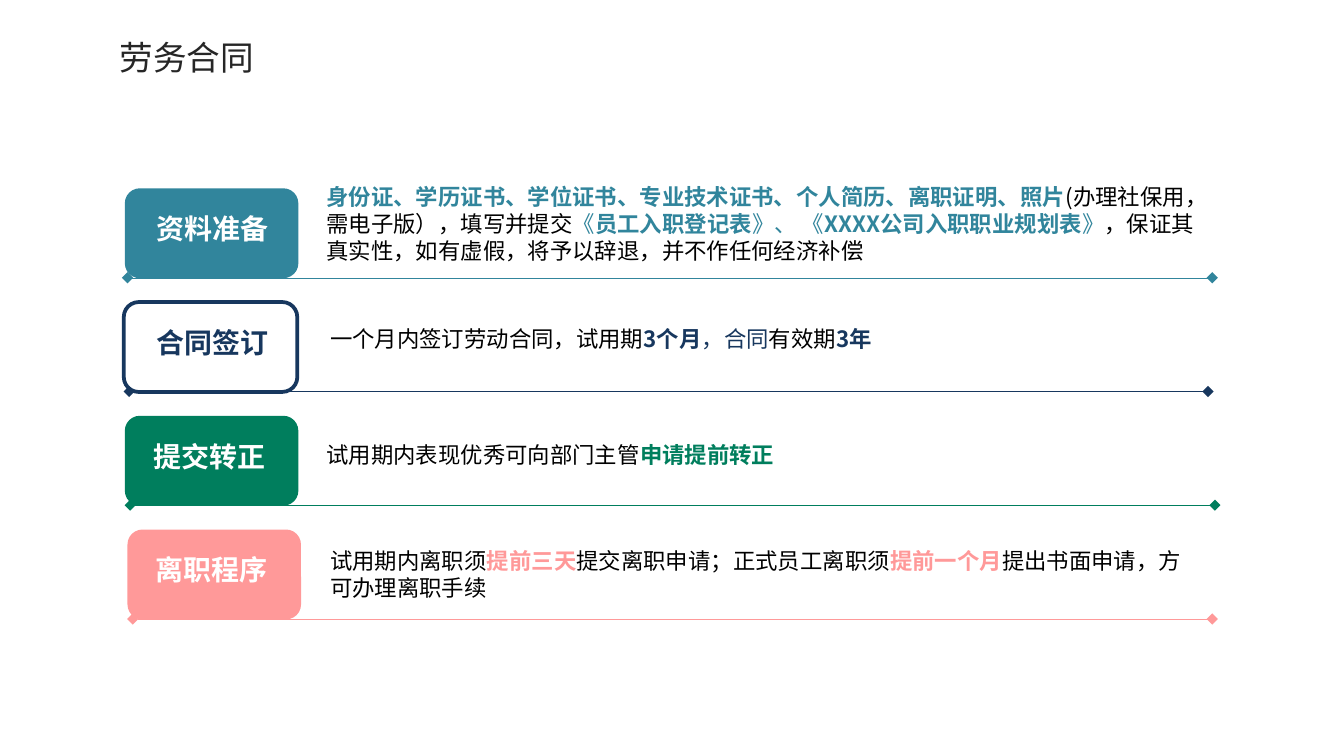
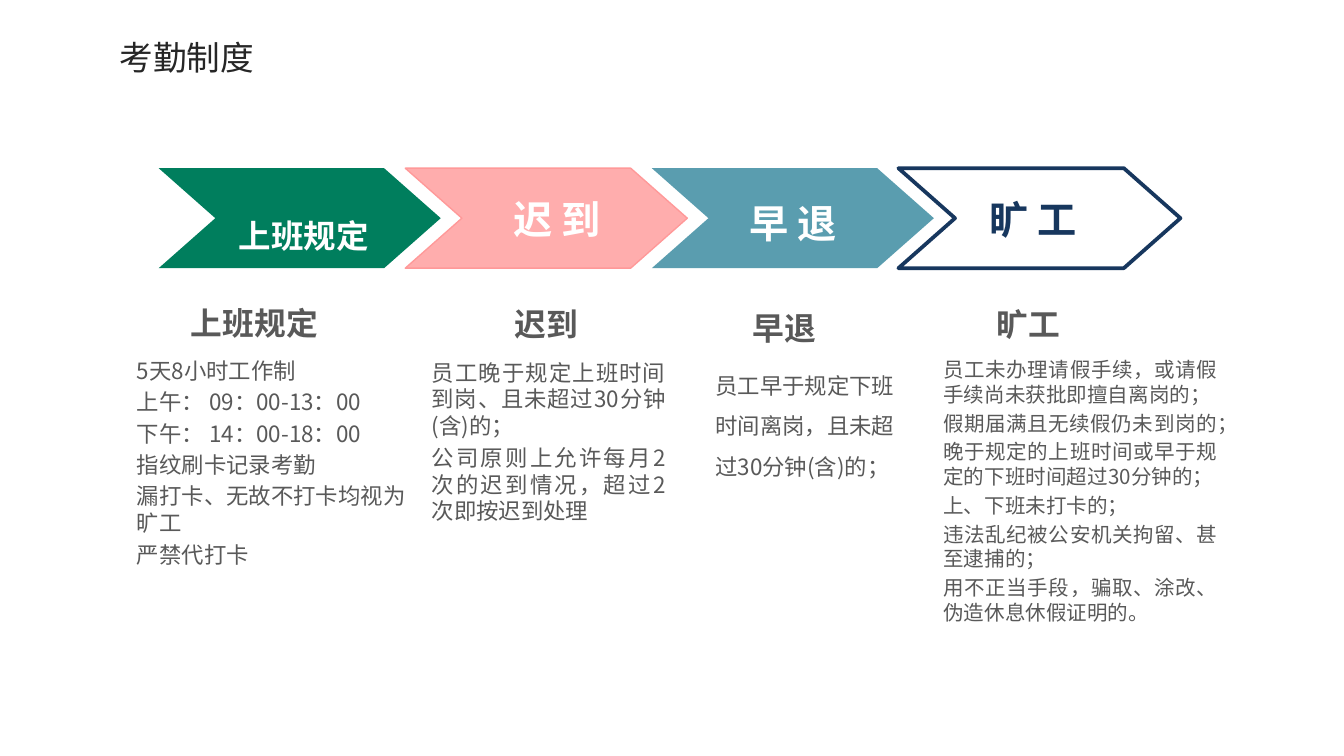
from dataclasses import dataclass
from typing import NamedTuple

from lxml.etree import SubElement
from pptx import Presentation
from pptx.dml.color import RGBColor
from pptx.enum.dml import MSO_LINE as Dash
from pptx.enum.shapes import MSO_CONNECTOR as Link, MSO_SHAPE as Form
from pptx.enum.text import MSO_ANCHOR as Anchor, MSO_AUTO_SIZE as Fit, PP_ALIGN as Align
from pptx.oxml.ns import qn
from pptx.util import Cm, Pt

FONT = "Noto Sans CJK SC"
HUES = {
    "white": "FFFFFF", "black": "000000", "title": "262626", "gray": "595959",
    "teal": "31859C", "navy": "17375E", "green": "007E5D", "pink": "FF9999",
}
WIDE = (0.25, 0.13)
SLIM = (0.18, 0.1)


class Box(NamedTuple):
    left: float
    top: float
    width: float
    height: float


class Run(NamedTuple):
    text: str
    hue: str
    bold: bool = False


@dataclass
class Style:
    size: float
    align: Align = Align.LEFT
    wrap: bool = True
    inset: tuple[float, float] = WIDE
    anchor: Anchor = Anchor.TOP
    space: float | None = None
    gap: float = 0
    base: int = 0


@dataclass
class Card:
    hue: str
    label: str
    left: float
    tab: float
    body: Box
    ends: tuple[float, float]
    runs: list[Run]
    solid: bool = True


@dataclass
class Stage:
    hue: str
    tag: str
    spot: Box
    face: Style
    head: str
    crown: Box
    notes: list[str]
    area: Box
    text: Style
    solid: bool = True
    alpha: int = 100
    edge: float = 0


TITLE = Style(18, wrap=False)
LABEL = Style(15, Align.CENTER, wrap=False)
BODY = Style(12)
HEAD = Style(17, Align.CENTER, wrap=False, inset=SLIM)
TAG = Style(21, Align.CENTER, anchor=Anchor.MIDDLE)

CARD_TOP, CARD_STEP = 3.56, 2.15
CARDS = [
    Card("teal", "资料准备", 2.36, 2.69, Box(5.92, 3.33, 17.02, 1.8), (2.41, 22.91), [
        Run("身份证、学历证书、学位证书、专业技术证书、个人简历、离职证明、照片", "teal", True),
        Run("(办理社保用，需电子版），填写并提交", "black"),
        Run("《", "teal"),
        Run("员工入职登记表", "teal", True),
        Run("》、 《", "teal"),
        Run("XXXX公司入职职业规划表", "teal", True),
        Run("》", "teal"),
        Run("，保证其真实性，如有虚假，将予以辞退，并不作任何经济补偿", "black"),
    ]),
    Card("navy", "合同签订", 2.34, 2.69, Box(5.99, 6.02, 12.95, 0.76), (2.44, 22.83), [
        Run("一个月内签订劳动合同，试用期", "black"),
        Run("3个月", "navy", True),
        Run("，合同", "navy"),
        Run("有效期", "black"),
        Run("3年", "navy", True),
    ], solid=False),
    Card("green", "提交转正", 2.36, 2.64, Box(5.92, 8.2, 15.47, 0.76), (2.46, 22.96), [
        Run("试用期内表现优秀可向部门主管", "black"),
        Run("申请提前转正", "green", True),
    ]),
    Card("pink", "离职程序", 2.41, 2.67, Box(5.99, 10.21, 16.92, 1.27), (2.51, 22.91), [
        Run("试用期内离职须", "black"),
        Run("提前三天", "pink", True),
        Run("提交离职申请；正式员工离职须", "black"),
        Run("提前一个月", "pink", True),
        Run("提出书面申请，方可办理离职手续", "black"),
    ]),
]

STAGES = [
    Stage("green", "上班规定", Box(3.43, 3.53, 4.62, 1.19),
          Style(30, Align.CENTER, anchor=Anchor.MIDDLE, space=1.2, base=-3000),
          "上班规定", Box(3.4, 5.64, 2.82, 0.91), [
              "5天8小时工作制",
              "上午： 09：00-13：00",
              "下午： 14：00-18：00",
              "指纹刷卡记录考勤",
              "漏打卡、无故不打卡均视为旷工",
              "严禁代打卡",
          ], Box(2.41, 6.65, 5.66, 4.29), Style(12, inset=SLIM, gap=2.4)),
    Stage("pink", "迟 到", Box(8.28, 3.56, 4.5, 1.14), TAG,
          "迟到", Box(9.53, 5.66, 1.6, 0.91), [
              "员工晚于规定上班时间到岗、且未超过30分钟(含)的；",
              "公司原则上允许每月2次的迟到情况，超过2次即按迟到处理",
          ], Box(7.98, 6.68, 4.78, 3.38),
          Style(12, Align.JUSTIFY, inset=SLIM, gap=2.4), alpha=80, edge=0.75),
    Stage("teal", "早 退", Box(12.75, 3.51, 4.47, 1.24),
          Style(21, Align.CENTER, anchor=Anchor.MIDDLE, space=1.2),
          "早退", Box(14.02, 5.74, 1.6, 0.91), [
              "员工早于规定下班时间离岗，且未超过30分钟(含)的；",
          ], Box(13.34, 6.68, 3.94, 2.49),
          Style(12, inset=SLIM, space=1.5), alpha=80),
    Stage("navy", "旷 工", Box(17.27, 3.56, 4.5, 1.14), TAG,
          "旷工", Box(18.64, 5.66, 1.6, 0.91), [
              "员工未办理请假手续，或请假手续尚未获批即擅自离岗的；",
              "假期届满且无续假仍未到岗的；",
              "晚于规定的上班时间或早于规定的下班时间超过30分钟的；",
              "上、下班未打卡的；",
              "违法乱纪被公安机关拘留、甚至逮捕的；",
              "用不正当手段，骗取、涂改、伪造休息休假证明的。",
          ], Box(17.65, 6.65, 5.54, 5.36),
          Style(11, Align.JUSTIFY, inset=SLIM, gap=2.2), solid=False, edge=2),
]


def tint(name: str) -> RGBColor:
    return RGBColor.from_string(HUES[name])


def write(slide, box: Box, style: Style, paras: list[list[Run]]) -> None:
    frame = slide.shapes.add_textbox(*map(Cm, box)).text_frame
    frame.word_wrap = style.wrap
    frame.auto_size = Fit.SHAPE_TO_FIT_TEXT
    frame.vertical_anchor = style.anchor
    side, rim = map(Cm, style.inset)
    frame.margin_left = frame.margin_right = side
    frame.margin_top = frame.margin_bottom = rim
    for index, runs in enumerate(paras):
        para = frame.add_paragraph() if index else frame.paragraphs[0]
        para.alignment = style.align
        if style.space:
            para.line_spacing = style.space
        if index and style.gap:
            para.space_before = Pt(style.gap)
        for item in runs:
            run = para.add_run()
            run.text = item.text
            font = run.font
            font.size, font.bold, font.name = Pt(style.size), item.bold, FONT
            font.color.rgb = tint(item.hue)
            props = run._r.get_or_add_rPr()
            SubElement(props, qn("a:ea"), typeface=FONT)
            if style.base:
                props.set("baseline", str(style.base))


def paint(shape, hue: str, solid: bool, edge: float = 0, alpha: int = 100) -> None:
    shape.shadow.inherit = False
    if solid:
        shape.fill.solid()
        shape.fill.fore_color.rgb = tint(hue)
        if alpha < 100:
            color = shape.fill._xPr.find(qn("a:solidFill"))[0]
            SubElement(color, qn("a:alpha"), val=str(alpha * 1000))
    else:
        shape.fill.background()
    if edge:
        shape.line.color.rgb = tint(hue)
        shape.line.width = Pt(edge)
    else:
        shape.line.fill.background()


def rule(slide, ends: tuple[float, float], y: float, hue: str) -> None:
    start, stop = map(Cm, ends)
    link = slide.shapes.add_connector(Link.STRAIGHT, start, Cm(y), stop, Cm(y))
    link.line.color.rgb = tint(hue)
    link.line.width = Pt(0.25)
    link.line.dash_style = Dash.ROUND_DOT
    for end in ("a:headEnd", "a:tailEnd"):
        SubElement(link.line._get_or_add_ln(), qn(end), type="diamond")
    SubElement(link._element.spPr, qn("a:effectLst"))


def arrow(slide, left: float, stage: Stage) -> None:
    top, width, height, notch = 3.18, 5.33, 1.89, 1.07
    neck, tip = left + width - notch, left + width
    mid, base = top + height / 2, top + height
    dots = [(neck, top), (tip, mid), (neck, base), (left, base), (left + notch, mid)]
    pen = slide.shapes.build_freeform(Cm(left), Cm(top))
    pen.add_line_segments([(Cm(x), Cm(y)) for x, y in dots], close=True)
    paint(pen.convert_to_shape(), stage.hue, stage.solid, stage.edge, stage.alpha)


def start(deck, title: str):
    slide = deck.slides.add_slide(deck.slide_layouts[6])
    write(slide, Box(2.01, 0.56, 3.07, 1.02), TITLE, [[Run(title, "title")]])
    return slide


def labor(deck) -> None:
    slide = start(deck, "劳务合同")
    for index, card in enumerate(CARDS):
        top = CARD_TOP + index * CARD_STEP
        box = Box(card.left, top, 3.28, 1.7)
        shape = slide.shapes.add_shape(Form.ROUNDED_RECTANGLE, *map(Cm, box))
        paint(shape, card.hue, card.solid, 0 if card.solid else 2)
        ink = "white" if card.solid else card.hue
        write(slide, Box(card.tab, top + 0.31, 2.64, 0.89), LABEL,
              [[Run(card.label, ink, True)]])
        write(slide, card.body, BODY, [card.runs])
        rule(slide, card.ends, top + 1.69, card.hue)


def hours(deck) -> None:
    slide = start(deck, "考勤制度")
    for index, stage in enumerate(STAGES):
        arrow(slide, 3 + index * 4.66, stage)
    for stage in STAGES:
        ink = "white" if stage.solid else stage.hue
        write(slide, stage.spot, stage.face, [[Run(stage.tag, ink, True)]])
        write(slide, stage.crown, HEAD, [[Run(stage.head, "gray", True)]])
        write(slide, stage.area, stage.text, [[Run(note, "gray")] for note in stage.notes])


def main() -> None:
    deck = Presentation()
    deck.slide_width, deck.slide_height = Cm(25.4), Cm(14.29)
    labor(deck)
    hours(deck)
    deck.save("out.pptx")


if __name__ == "__main__":
    main()
